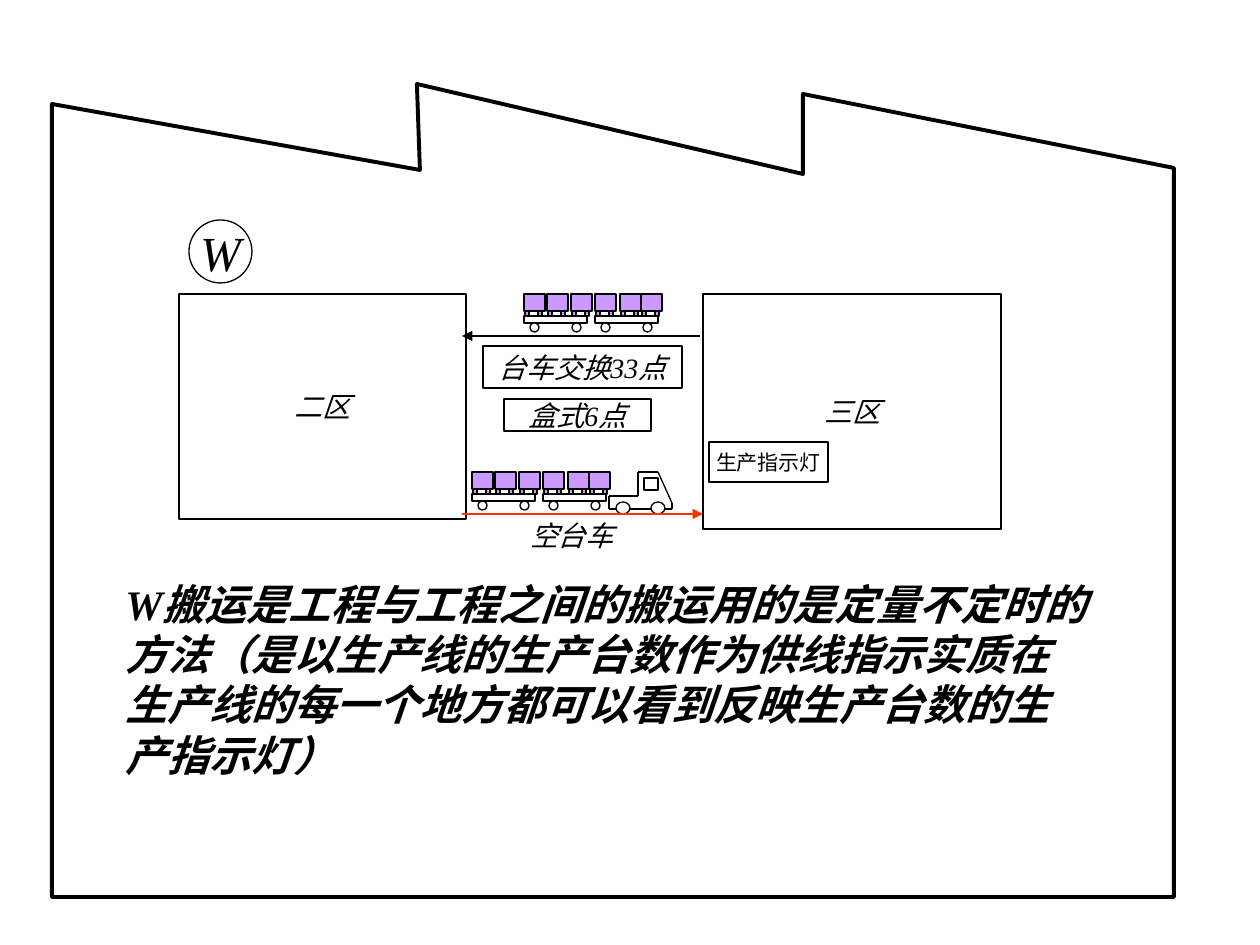
import lxml.etree
import pptx
import pptx.dml.color
import pptx.enum.shapes
import pptx.enum.text
import pptx.oxml.ns
import pptx.util

PX = 914400 / 126
BLACK, WHITE, PURPLE, RED = "000000", "FFFFFF", "CC99FF", "FF3300"
FONT = "Times New Roman"
RECT = pptx.enum.shapes.MSO_SHAPE.RECTANGLE
OVAL = pptx.enum.shapes.MSO_SHAPE.OVAL
rgb = pptx.dml.color.RGBColor.from_string


def add_box(shapes, kind, x, y, width, height, fill=WHITE, line=BLACK,
            text="", size=16, bold=False, italic=True, centred=True):
    """Add a preset shape, measured in px; None means no fill or no line."""
    box = shapes.add_shape(kind, *(round(v * PX) for v in (x, y, width, height)))
    box.shadow.inherit = False
    for part, colour in ((box.fill, fill), (box.line.fill, line)):
        if colour:
            part.solid()
            part.fore_color.rgb = rgb(colour)
        else:
            part.background()
    box.line.width = pptx.util.Pt(0.75)
    if text:
        frame = box.text_frame
        frame.word_wrap = not centred
        anchor = pptx.enum.text.MSO_ANCHOR
        frame.vertical_anchor = anchor.MIDDLE if centred else anchor.TOP
        frame.text = text
        para = frame.paragraphs[0]
        align = pptx.enum.text.PP_ALIGN
        para.alignment = align.CENTER if centred else align.LEFT
        span = para.runs[0]
        span.font.name = FONT
        span.font.size = pptx.util.Pt(size)
        span.font.bold = bold
        span.font.italic = italic
        span.font.color.rgb = rgb(BLACK)


def add_line(shapes, start, end, colour=BLACK, arrow=False):
    line = shapes.add_connector(pptx.enum.shapes.MSO_CONNECTOR.STRAIGHT,
                                *(round(v * PX) for v in (*start, *end)))
    line.line.color.rgb = rgb(colour)
    line.line.width = pptx.util.Pt(0.75)
    if arrow:
        lxml.etree.SubElement(line.line._get_or_add_ln(),
                              pptx.oxml.ns.qn("a:tailEnd"), type="triangle")
    lxml.etree.SubElement(line._element.spPr, pptx.oxml.ns.qn("a:effectLst"))


deck = pptx.Presentation()
deck.slide_width = pptx.util.Inches(10)
deck.slide_height = pptx.util.Inches(7.5)
page = deck.slides.add_slide(deck.slide_layouts[6])
shapes = page.shapes

# Factory outline and the small tractor
factory = [(52, 897), (52, 104), (420, 170), (417, 84), (803, 174),
           (803, 94), (1174, 168), (1174, 897)]
tractor = [(500, 301), (494, 323), (494, 328), (519, 328), (519, 318),
           (509, 318), (509, 301)]
tractor_shapes = shapes.add_group_shape().shapes
for parent, points, weight in ((shapes, factory, 2.25),
                               (tractor_shapes, tractor, 0.75)):
    builder = parent.build_freeform(*points[0], scale=PX)
    builder.add_line_segments(points[1:], close=True)
    outline = builder.convert_to_shape()
    outline.shadow.inherit = False
    outline.fill.solid()
    outline.fill.fore_color.rgb = rgb(WHITE)
    outline.line.color.rgb = rgb(BLACK)
    outline.line.width = pptx.util.Pt(weight)
for x in (496, 509):
    add_box(tractor_shapes, OVAL, x, 324, 8, 8)

# Zones
add_box(shapes, RECT, 179, 294, 287, 225, text="二区")
add_box(shapes, RECT, 703, 294, 298, 235, text="三区")

# Truck
truck_shapes = shapes.add_group_shape().shapes
truck = [(609, 509), (609, 496), (638, 496), (638, 472), (658, 472),
         (672, 503), (672, 509)]
for start, end in zip(truck, truck[1:] + truck[:1]):
    add_line(truck_shapes, start, end)
for x, y in ((616, 502), (651, 502), (644, 478)):
    add_box(truck_shapes, RECT if y == 478 else OVAL, x, y, 14, 12)

# Two trains of two carts, loaded with six crates on legs
for left, top in ((524, 294), (472, 472)):
    train_shapes = shapes.add_group_shape().shapes
    for cart in (left, left + 71):
        add_box(train_shapes, RECT, cart, top + 22, 63, 7)
        for wheel in (6, 48):
            add_box(train_shapes, OVAL, cart + wheel, top + 29, 9, 9)
    for crate in (0, 23, 47, 71, 96, 117):
        add_box(train_shapes, RECT, left + crate, top, 21, 17, PURPLE)
        for leg in (1, 14):
            add_box(train_shapes, RECT, left + crate + leg, top + 17, 4, 5, PURPLE)

# Routes
add_line(shapes, (700, 336), (462, 336), arrow=True)
add_line(shapes, (462, 514), (703, 514), RED, arrow=True)

# Labels
add_box(shapes, RECT, 483, 346, 199, 42, text="台车交换33点")
add_box(shapes, RECT, 504, 399, 147, 32, text="盒式6点")
add_box(shapes, OVAL, 189, 220, 63, 63, text="W", size=28)
add_box(shapes, RECT, 514, 525, 116, 21, line=None, text="空台车")
add_box(shapes, RECT, 709, 442, 119, 40, fill=None, text="生产指示灯",
        size=12, italic=False)
add_box(shapes, RECT, 113, 572, 987, 252, line=WHITE, size=24, bold=True,
        centred=False,
        text="W搬运是工程与工程之间的搬运用的是定量不定时的方法"
             "（是以生产线的生产台数作为供线指示实质在生产线的每一个地方"
             "都可以看到反映生产台数的生产指示灯）")

deck.save("out.pptx")
